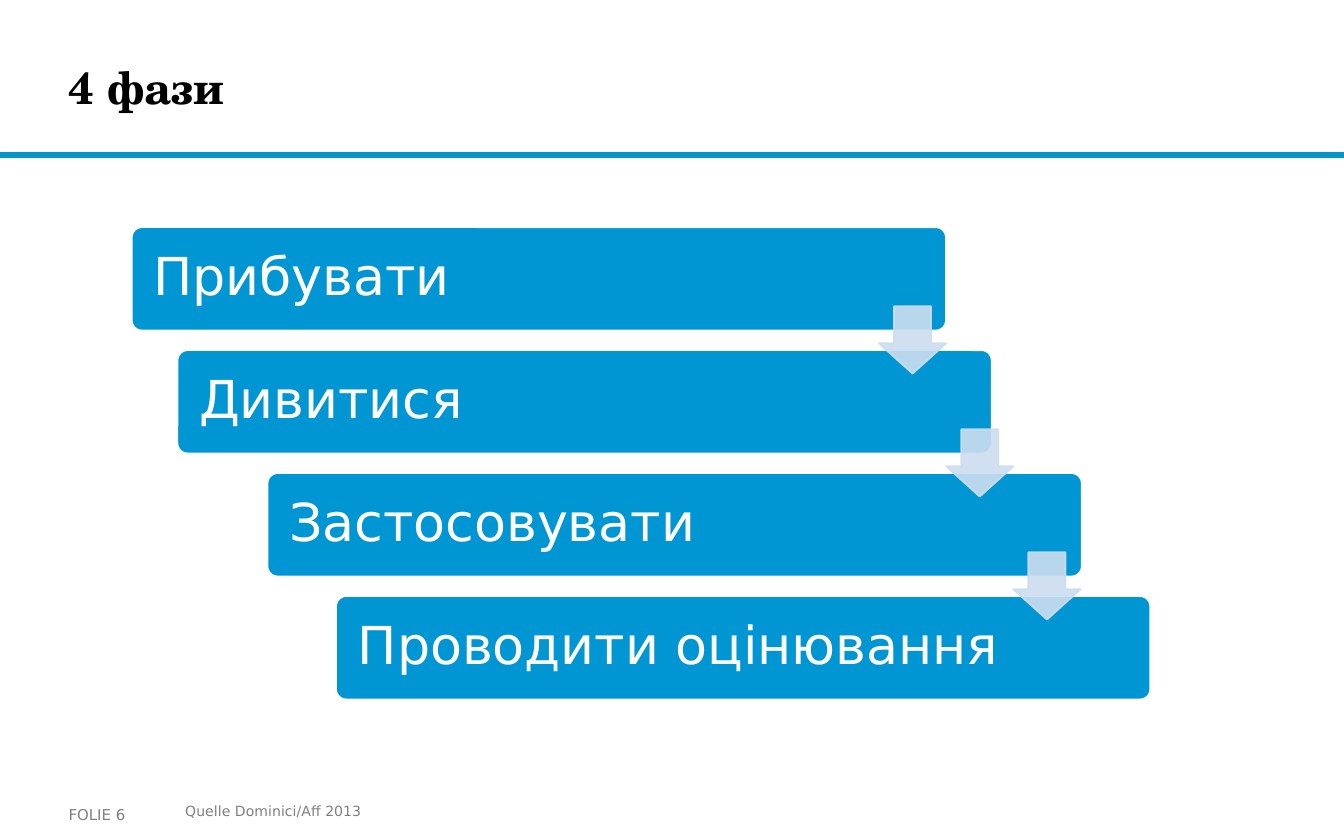
from lxml.etree import SubElement
from pptx import Presentation
from pptx.dml.color import RGBColor
from pptx.enum.shapes import MSO_SHAPE
from pptx.enum.text import MSO_ANCHOR, PP_ALIGN
from pptx.oxml.ns import qn
from pptx.util import Inches, Pt

COLORS = {
    "bar": "0096D3",
    "rule": "0C94B7",
    "arrow": "CCDDEF",
    "white": "FFFFFF",
    "black": "000000",
    "footer": "808080",
}
BODY_FONT = "DejaVu Sans"
TITLE_FONT = "TeX Gyre Schola"

PHASES = ["Прибувати", "Дивитися", "Застосовувати", "Проводити оцінювання"]
BAR_LEFTS = [0.98, 1.32, 1.99, 2.5]
BAR_TOP, BAR_STEP = 1.69, 0.915
BAR_WIDTH, BAR_HEIGHT = 6.06, 0.77
ARROW_LEFT, ARROW_TOP = 6.54, 2.28
ARROW_SHIFT, ARROW_SIZE = 0.5, 0.5


def color(name):
    return RGBColor.from_string(COLORS[name])


def write(shape, text, size, ink, font=BODY_FONT, bold=False,
          margins=(0, 0, 0, 0), anchor=MSO_ANCHOR.MIDDLE, line_spacing=None):
    """Fill a shape with one left-aligned line; margins run left, top, right, bottom."""
    frame = shape.text_frame
    frame.word_wrap = True
    frame.vertical_anchor = anchor
    (frame.margin_left, frame.margin_top,
     frame.margin_right, frame.margin_bottom) = map(Inches, margins)
    para = frame.paragraphs[0]
    para.alignment = PP_ALIGN.LEFT
    if line_spacing:
        para.line_spacing = line_spacing
    span = para.add_run()
    span.text = text
    span.font.name = font
    span.font.size = Pt(size)
    span.font.bold = bold
    span.font.color.rgb = color(ink)


def set_opacity(fill_format, shape_properties, percent):
    """Make every solid colour of the shape, fill and line, partly transparent."""
    for solid in shape_properties.iter(qn("a:solidFill")):
        SubElement(solid[0], qn("a:alpha"), val=str(percent * 1000))


class SlideBuilder:
    def __init__(self, page):
        self.page = page

    def title(self, text, left, top, width, height):
        box = self.page.shapes.title
        box.left, box.top = Inches(left), Inches(top)
        box.width, box.height = Inches(width), Inches(height)
        write(box, text, 24, "black", font=TITLE_FONT, bold=True)

    def shape(self, kind, left, top, width, height, fill, line, adjustments=()):
        shape = self.page.shapes.add_shape(
            kind, Inches(left), Inches(top), Inches(width), Inches(height))
        shape.shadow.inherit = False
        shape.fill.solid()
        shape.fill.fore_color.rgb = color(fill)
        shape.line.color.rgb = color(line)
        shape.line.width = Pt(1)
        for index, value in enumerate(adjustments):
            shape.adjustments[index] = value
        return shape

    def bar(self, text, left, top):
        bar = self.shape(MSO_SHAPE.ROUNDED_RECTANGLE, left, top, BAR_WIDTH,
                         BAR_HEIGHT, "bar", "white", [0.1])
        write(bar, text, 28, "white", margins=(0.14, 0.12, 0.14, 0.12),
              line_spacing=0.9)

    def arrow(self, left, top):
        arrow = self.shape(MSO_SHAPE.DOWN_ARROW, left, top, ARROW_SIZE,
                           ARROW_SIZE, "arrow", "arrow", [0.55, 0.45])
        set_opacity(arrow.fill, arrow.element.spPr, 90)

    def label(self, text, left, top, width, height, size, **style):
        box = self.page.shapes.add_textbox(
            Inches(left), Inches(top), Inches(width), Inches(height))
        write(box, text, size, "footer", **style)


def main():
    deck = Presentation()
    deck.slide_width, deck.slide_height = Inches(10), Inches(6.25)
    builder = SlideBuilder(deck.slides.add_slide(deck.slide_layouts[5]))

    builder.shape(MSO_SHAPE.RECTANGLE, 0, 1.14, 10, 0.03, "rule", "bar")
    builder.title("4 фази", 0.51, 0.15, 7.48, 0.99)

    for row, (phase, left) in enumerate(zip(PHASES, BAR_LEFTS)):
        builder.bar(phase, left, BAR_TOP + row * BAR_STEP)
    for row in range(len(PHASES) - 1):
        builder.arrow(ARROW_LEFT + row * ARROW_SHIFT, ARROW_TOP + row * BAR_STEP)

    builder.label("FOLIE 6", 0.51, 5.92, 0.98, 0.28, 8, margins=(0, 0.05, 0, 0.05))
    builder.label("Quelle Dominici/Aff 2013", 1.28, 5.92, 5.14, 0.23, 7.5,
                  margins=(0.1, 0.05, 0.1, 0.05), anchor=MSO_ANCHOR.TOP)

    deck.save("out.pptx")


if __name__ == "__main__":
    main()
